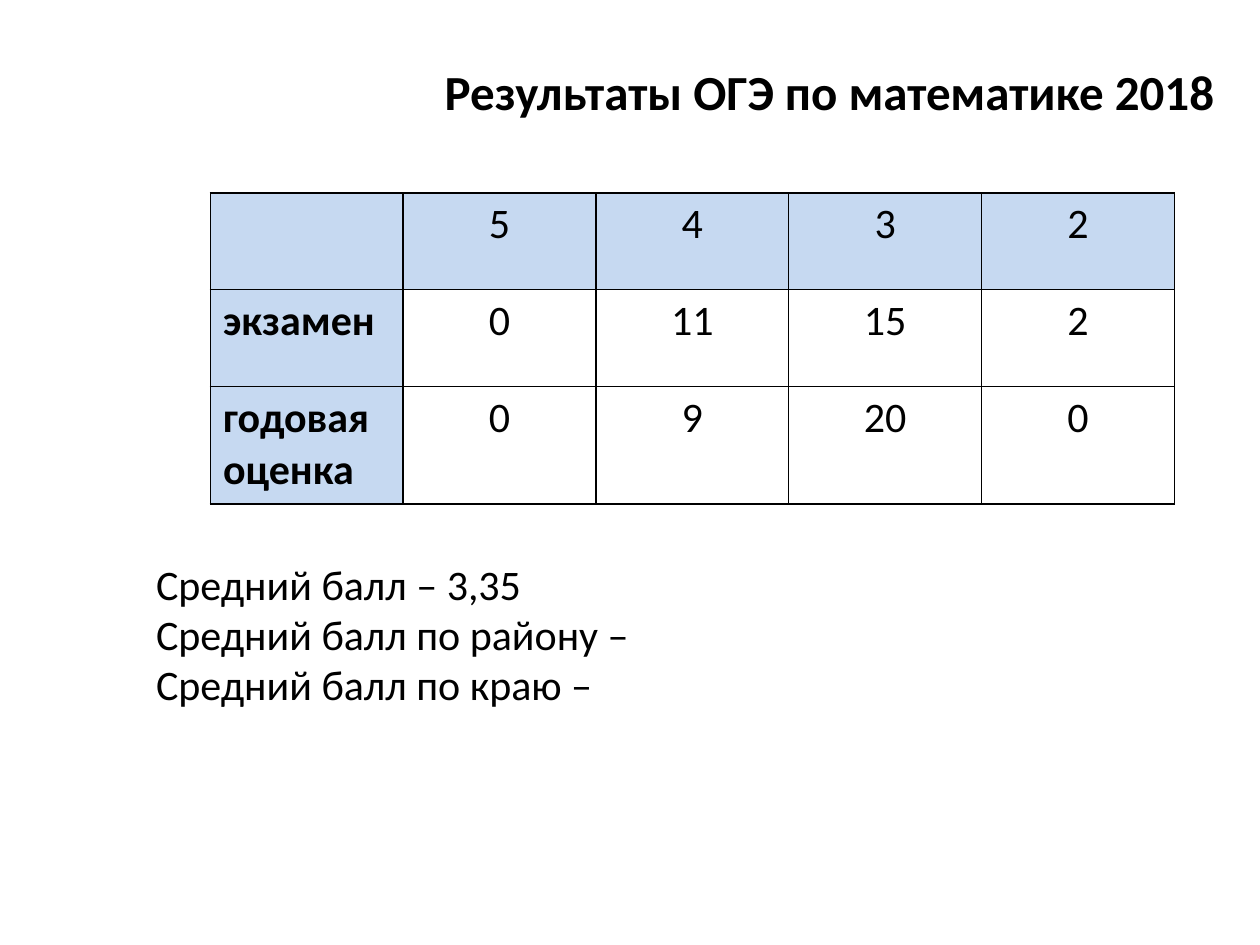
from dataclasses import dataclass

from lxml import etree
from pptx import Presentation
from pptx.dml.color import RGBColor
from pptx.enum.text import MSO_AUTO_SIZE, PP_ALIGN
from pptx.oxml.ns import qn
from pptx.util import Inches, Pt

CENTER, LEFT = PP_ALIGN.CENTER, PP_ALIGN.LEFT
FIT_SHAPE = MSO_AUTO_SIZE.SHAPE_TO_FIT_TEXT
FONT = "Calibri"
COLORS = {"text": "000000", "border": "000000", "header": "C6D9F1", "body": "FFFFFF"}
COL_WIDTH = 1.53
ROW_HEIGHTS = [0.77, 0.77, 0.93]
RESULTS = [
    ["", "5", "4", "3", "2"],
    ["экзамен", "0", "11", "15", "2"],
    ["годовая оценка", "0", "9", "20", "0"],
]


@dataclass
class TextBlock:
    left: float
    top: float
    width: float
    height: float
    lines: list[str]
    size: int
    bold: bool = False


BLOCKS = [
    TextBlock(3.43, 0.44, 6.39, 0.57, ["Результаты ОГЭ по математике 2018"], 28, True),
    TextBlock(1.14, 4.38, 4.2, 1.31, [
        "Средний балл – 3,35",
        "Средний балл по району –",
        "Средний балл по краю –",
    ], 24),
]


def add_run(p, text: str, size: int, bold: bool) -> None:
    r = p.add_run()
    r.text = text
    r.font.name = FONT
    r.font.size = Pt(size)
    r.font.bold = bold
    r.font.color.rgb = RGBColor.from_string(COLORS["text"])


def add_text(slide, block: TextBlock) -> None:
    sp = slide.shapes.add_textbox(
        Inches(block.left), Inches(block.top), Inches(block.width), Inches(block.height))
    tf = sp.text_frame
    tf.word_wrap = False
    tf.auto_size = FIT_SHAPE
    for i, line in enumerate(block.lines):
        p = tf.add_paragraph() if i else tf.paragraphs[0]
        add_run(p, line, block.size, block.bold)


def set_borders(cell) -> None:
    props = cell._tc.get_or_add_tcPr()
    for i, side in enumerate(("lnL", "lnR", "lnT", "lnB")):
        ln = etree.Element(qn(f"a:{side}"), w=str(Pt(1)))
        fill = etree.SubElement(ln, qn("a:solidFill"))
        etree.SubElement(fill, qn("a:srgbClr"), val=COLORS["border"])
        props.insert(i, ln)


def add_results(slide, left: float, top: float) -> None:
    rows, cols = len(RESULTS), len(RESULTS[0])
    table = slide.shapes.add_table(
        rows, cols, Inches(left), Inches(top),
        Inches(COL_WIDTH * cols), Inches(sum(ROW_HEIGHTS))).table
    for column in table.columns:
        column.width = Inches(COL_WIDTH)
    for i, values in enumerate(RESULTS):
        table.rows[i].height = Inches(ROW_HEIGHTS[i])
        for j, value in enumerate(values):
            cell = table.cell(i, j)
            color = COLORS["header" if i == 0 or j == 0 else "body"]
            cell.fill.solid()
            cell.fill.fore_color.rgb = RGBColor.from_string(color)
            set_borders(cell)
            p = cell.text_frame.paragraphs[0]
            p.alignment = CENTER if j else LEFT
            if value:
                add_run(p, value, 24, j == 0)


def main() -> None:
    """Build the slide of mathematics exam results."""
    prs = Presentation()
    prs.slide_width, prs.slide_height = Inches(10), Inches(7.5)
    slide = prs.slides.add_slide(prs.slide_layouts[6])
    add_results(slide, 1.67, 1.53)
    for block in BLOCKS:
        add_text(slide, block)
    prs.save("out.pptx")


if __name__ == "__main__":
    main()
